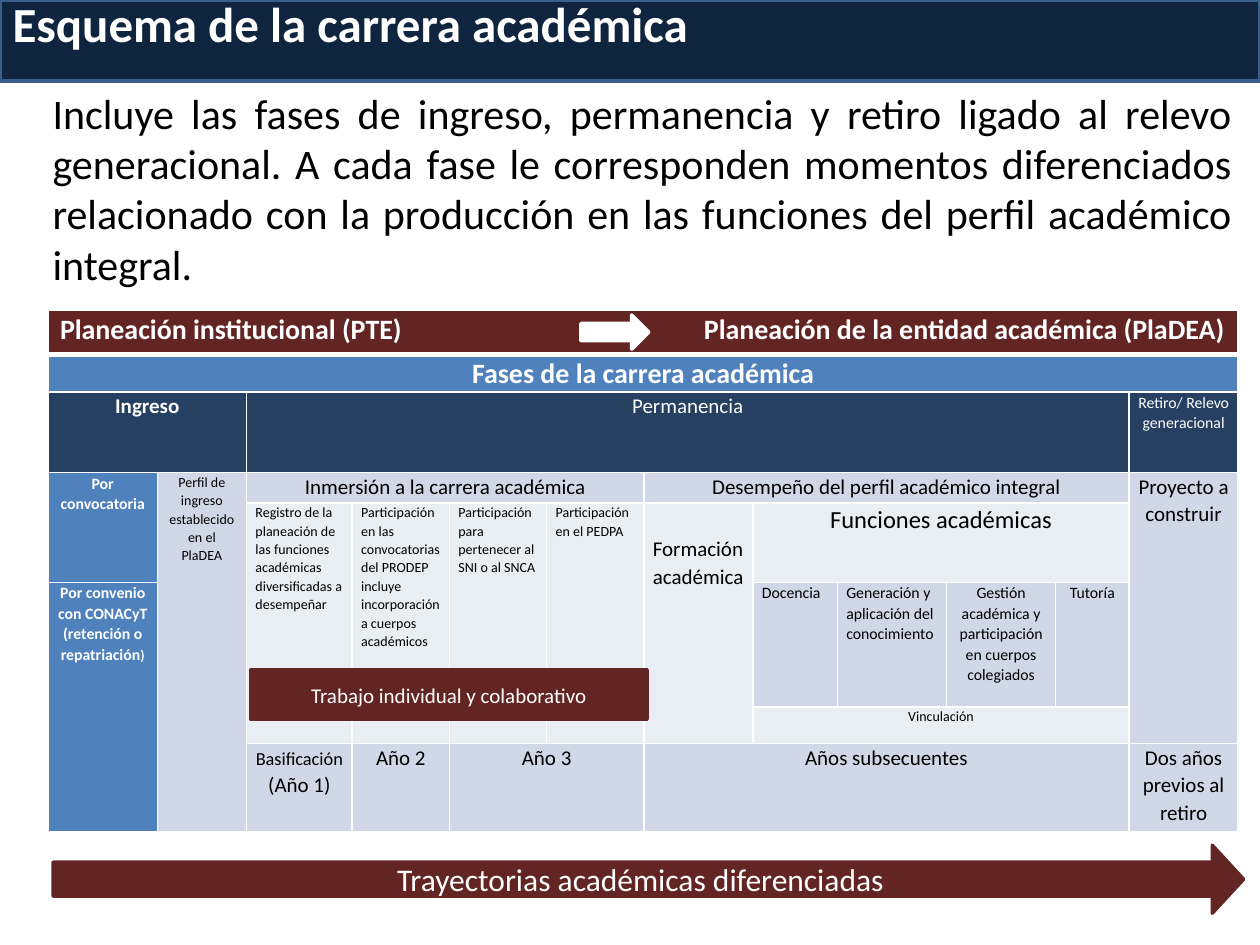
from pptx import Presentation
from pptx import util as u
from pptx.dml.color import RGBColor
from pptx.enum import shapes, text
from pptx.oxml.ns import qn
from lxml import etree

Cm, Pt = u.Cm, u.Pt
LEFT, CENTER, JUSTIFY = text.PP_ALIGN.LEFT, text.PP_ALIGN.CENTER, text.PP_ALIGN.JUSTIFY

THEME = {
    "font": "Calibri", "white": "FFFFFF", "black": "000000",
    "bar": "0F243E", "bar_line": "3A5F8C", "wine": "632523",
    "blue": "4F81BD", "navy": "254061", "band": "D0D8E8", "pale": "E9EDF4",
    "title": 28, "intro": 24, "arrow": 18, "head": 16, "subhead": 14,
    "body": 12, "mid": 10.5, "small": 9, "tiny": 8,
}
DARK = ("wine", "blue", "navy")

# Content
TITLE = "Esquema de la carrera académica"
INTRO = ("Incluye las fases de ingreso, permanencia y retiro ligado al relevo generacional. "
         "A cada fase le corresponden momentos diferenciados relacionado con la producción "
         "en las funciones del perfil académico integral.")
PATHS = "Trayectorias académicas diferenciadas"
TEAMWORK = "Trabajo individual y colaborativo"

COLS = [2.2, 1.8, 2.13, 1.96, 1.96, 1.96, 2.2, 1.7, 2.2, 2.2, 1.48, 2.2]
ROWS = [0.89, 0.76, 1.63, 0.61, 1.6, 2.51, 0.74, 1.78]

# row, column, rows spanned, columns spanned, fill, [(text, size), ...], align, bold
CELLS = [
    (0, 0, 1, 12, "wine", [("Planeación institucional (PTE)\t"
                            "Planeación de la entidad académica (PlaDEA)", "head")], LEFT, True),
    (1, 0, 1, 12, "blue", [("Fases de la carrera académica", "head")], CENTER, True),
    (2, 0, 1, 2, "navy", [("Ingreso", "body")], CENTER, True),
    (2, 2, 1, 9, "navy", [("Permanencia", "body")], CENTER, False),
    (2, 11, 1, 1, "navy", [("Retiro/ Relevo generacional", "small")], CENTER, False),
    (3, 0, 2, 1, "blue", [("Por convocatoria", "small")], CENTER, True),
    (3, 1, 5, 1, "band", [("Perfil de ingreso establecido en el PlaDEA", "tiny")], CENTER, False),
    (3, 2, 1, 4, "band", [("Inmersión a la carrera académica", "body")], CENTER, False),
    (3, 6, 1, 5, "band", [("Desempeño del perfil académico integral", "body")], CENTER, False),
    (3, 11, 4, 1, "band", [("Proyecto a construir", "body")], CENTER, False),
    (4, 2, 3, 1, "pale", [("Registro de la planeación de las funciones académicas "
                           "diversificadas a desempeñar", "tiny")], LEFT, False),
    (4, 3, 3, 1, "pale", [("Participación en las convocatorias del PRODEP incluye "
                           "incorporación a cuerpos académicos", "tiny")], LEFT, False),
    (4, 4, 3, 1, "pale", [("Participación para pertenecer al SNI o al SNCA", "tiny")], LEFT, False),
    (4, 5, 3, 1, "pale", [("Participación en el PEDPA", "tiny")], LEFT, False),
    (4, 6, 3, 1, "pale", [("Formación académica", "body")], LEFT, False),
    (4, 7, 1, 4, "pale", [("Funciones académicas", "subhead")], CENTER, False),
    (5, 0, 3, 1, "blue", [("Por convenio con CONACyT (retención o repatriación", "small"),
                          (")", "tiny")], CENTER, True),
    (5, 7, 1, 1, "band", [("Docencia", "small")], LEFT, False),
    (5, 8, 1, 1, "band", [("Generación y aplicación del conocimiento", "small")], LEFT, False),
    (5, 9, 1, 1, "band", [("Gestión académica y participación en cuerpos colegiados",
                           "small")], CENTER, False),
    (5, 10, 1, 1, "band", [("Tutoría", "small")], CENTER, False),
    (6, 7, 1, 4, "pale", [("Vinculación", "tiny")], CENTER, False),
    (7, 2, 1, 1, "band", [("Basificación", "mid"), (" (Año 1)", "body")], CENTER, False),
    (7, 3, 1, 1, "band", [("Año 2", "body")], CENTER, False),
    (7, 4, 1, 2, "band", [("Año 3", "body")], CENTER, False),
    (7, 6, 1, 5, "band", [("Años subsecuentes", "body")], CENTER, False),
    (7, 11, 1, 1, "band", [("Dos años previos al retiro", "body")], CENTER, False),
]


def rgb(name):
    return RGBColor.from_string(THEME[name])


def style(p, size, color, align=LEFT, bold=False):
    p.alignment = align
    f = p.font
    f.name, f.size, f.bold = THEME["font"], Pt(THEME[size]), bold
    f.color.rgb = rgb(color)


def paint(sp, fill, line):
    sp.fill.solid()
    sp.fill.fore_color.rgb = rgb(fill)
    sp.line.color.rgb = rgb(line)
    sp.line.width = Pt(2)


def add_box(slide, kind, box, fill, label=None, size="body"):
    sp = slide.shapes.add_shape(kind, *map(Cm, box))
    sp.shadow.inherit = False
    paint(sp, fill, fill)
    if label:
        tf = sp.text_frame
        tf.word_wrap, tf.vertical_anchor = True, text.MSO_ANCHOR.MIDDLE
        tf.text = label
        style(tf.paragraphs[0], size, "white", CENTER)
    return sp


def set_borders(cell, bottom):
    tc_pr = cell._tc.get_or_add_tcPr()
    for side, width in (("L", 1), ("R", 1), ("T", 1), ("B", bottom)):
        ln = etree.SubElement(tc_pr, qn("a:ln" + side), w=str(Pt(width)))
        fill = etree.SubElement(ln, qn("a:solidFill"))
        etree.SubElement(fill, qn("a:srgbClr"), val=THEME["white"])


def add_phases(slide):
    table = slide.shapes.add_table(len(ROWS), len(COLS), Cm(0.97), Cm(6.25),
                                   Cm(sum(COLS)), Cm(sum(ROWS))).table
    table.first_row = table.horz_banding = False
    for col, width in zip(table.columns, COLS):
        col.width = Cm(width)
    for row, height in zip(table.rows, ROWS):
        row.height = Cm(height)
    for r in range(len(ROWS)):
        for c in range(len(COLS)):
            set_borders(table.cell(r, c), 3 if r == 0 else 1)
    for r, c, rows, cols, fill, runs, align, bold in CELLS:
        cell = table.cell(r, c)
        if rows * cols > 1:
            cell.merge(table.cell(r + rows - 1, c + cols - 1))
        cell.fill.solid()
        cell.fill.fore_color.rgb = rgb(fill)
        cell.margin_left = cell.margin_right = Cm(0.18)
        cell.margin_top = cell.margin_bottom = 0
        p = cell.text_frame.paragraphs[0]
        p.line_spacing, p.space_after = 1.07, Pt(8)
        style(p, runs[0][1], "white" if fill in DARK else "black", align, bold)
        for words, size in runs:
            run = p.add_run()
            run.text = words
            if len(runs) > 1:
                run.font.size = Pt(THEME[size])
    # Planning row: second heading pushed right by a tab stop
    head = table.cell(0, 0)
    head.margin_left = Cm(0.24)
    p_pr = head.text_frame.paragraphs[0]._p.get_or_add_pPr()
    tabs = etree.Element(qn("a:tabLst"))
    etree.SubElement(tabs, qn("a:tab"), pos=str(Cm(23.48)), algn="r")
    p_pr.find(qn("a:defRPr")).addprevious(tabs)
    # Lowered text in the training cell
    table.cell(4, 6).margin_top = Cm(0.65)


def main():
    prs = Presentation()
    prs.slide_width, prs.slide_height = Cm(25.4), Cm(19.05)
    slide = prs.slides.add_slide(prs.slide_layouts[5])

    # Title bar
    title = slide.shapes.title
    title.left, title.top, title.width, title.height = 0, 0, prs.slide_width, Cm(1.63)
    paint(title, "bar", "bar_line")
    tf = title.text_frame
    tf.text = TITLE
    tf.auto_size, tf.vertical_anchor = text.MSO_AUTO_SIZE.NONE, text.MSO_ANCHOR.MIDDLE
    tf.margin_top, tf.margin_bottom = 0, Cm(0.7)
    style(tf.paragraphs[0], "title", "white", bold=True)

    # Introduction
    tf = slide.shapes.add_textbox(Cm(0.81), Cm(1.63), Cm(24.28), Cm(5.13)).text_frame
    tf.word_wrap = True
    tf.text = INTRO
    style(tf.paragraphs[0], "intro", "black", JUSTIFY)

    # Phases, and the arrows and band around them
    arrow = shapes.MSO_SHAPE.RIGHT_ARROW
    paths = add_box(slide, arrow, (1.07, 17.04, 24, 1.37), "wine", PATHS, "arrow")
    paths.adjustments[1] = 0.46
    add_phases(slide)
    add_box(slide, arrow, (11.71, 6.35, 1.37, 0.69), "white")
    add_box(slide, shapes.MSO_SHAPE.RECTANGLE, (5.05, 13.51, 8, 0.99), "wine", TEAMWORK)

    prs.save("out.pptx")


if __name__ == "__main__":
    main()
